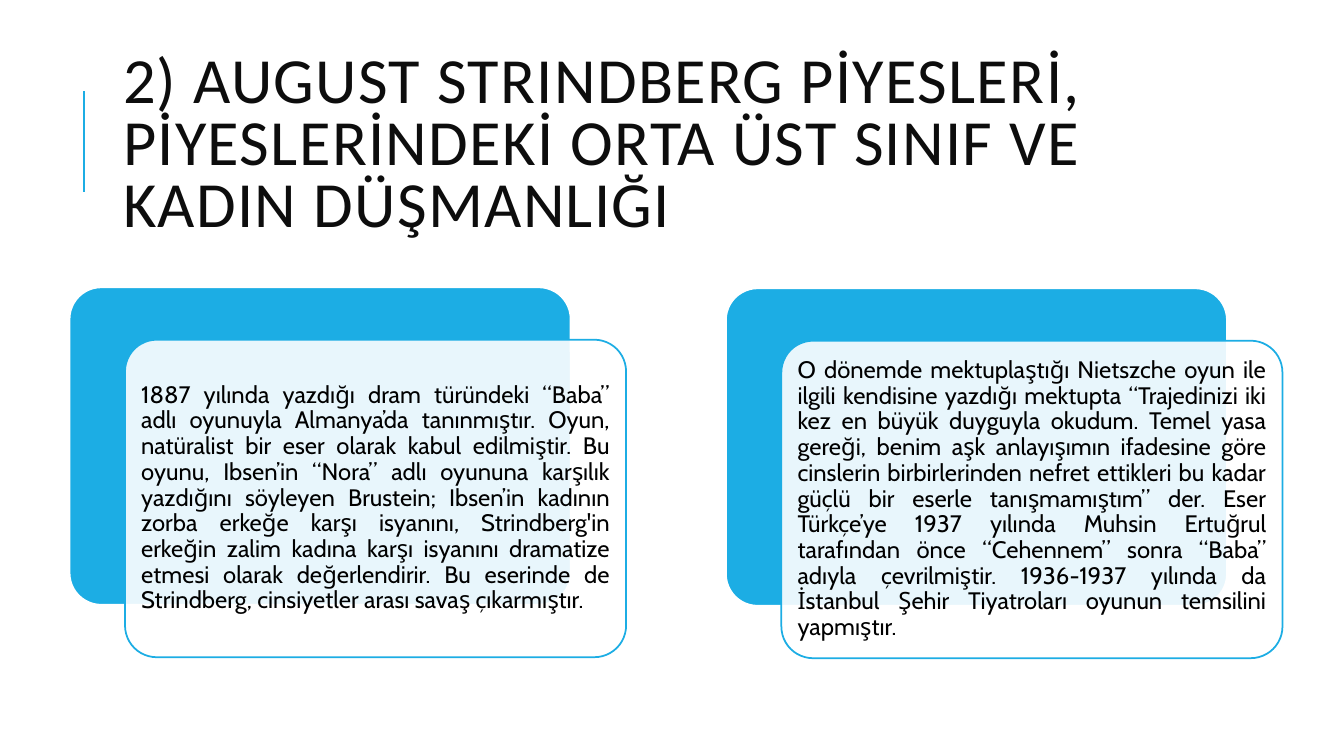
from dataclasses import dataclass

from lxml.etree import SubElement
from pptx import Presentation
from pptx.dml.color import RGBColor
from pptx.enum.shapes import MSO_CONNECTOR, MSO_SHAPE
from pptx.enum.text import MSO_ANCHOR, MSO_AUTO_SIZE, PP_ALIGN
from pptx.oxml.ns import qn
from pptx.shapes.autoshape import Shape
from pptx.slide import Slide
from pptx.text.text import TextFrame
from pptx.util import Inches, Pt

COLORS = {
    "accent": "1CADE4",
    "white": "FFFFFF",
    "title": "0D0D0D",
    "body": "000000",
}
CARD_WIDTH, CARD_HEIGHT = 4.97, 3.15
FRONT_SHIFT_X, FRONT_SHIFT_Y = 0.55, 0.52
TEXT_MARGIN = 0.09
TEXT_INSET = 0.07


@dataclass
class Card:
    left: float
    top: float
    text: str


TITLE = "2) AUGUST STRINDBERG PİYESLERİ, PİYESLERİNDEKİ ORTA ÜST SINIF VE KADIN DÜŞMANLIĞI"
CARDS = [
    Card(
        0.69,
        2.85,
        "1887 yılında yazdığı dram türündeki “Baba” adlı oyunuyla Almanya’da tanınmıştır. "
        "Oyun, natüralist bir eser olarak kabul edilmiştir. Bu oyunu, Ibsen’in “Nora” adlı "
        "oyununa karşılık yazdığını söyleyen Brustein; Ibsen’in kadının zorba erkeğe karşı "
        "isyanını, Strindberg'in erkeğin zalim kadına karşı isyanını dramatize etmesi olarak "
        "değerlendirir. Bu eserinde de Strindberg, cinsiyetler arası savaş çıkarmıştır.",
    ),
    Card(
        7.2,
        2.86,
        "O dönemde mektuplaştığı Nietszche oyun ile ilgili kendisine yazdığı mektupta "
        "“Trajedinizi iki kez en büyük duyguyla okudum. Temel yasa gereği, benim aşk "
        "anlayışımın ifadesine göre cinslerin birbirlerinden nefret ettikleri bu kadar güçlü "
        "bir eserle tanışmamıştım” der. Eser Türkçe’ye 1937 yılında Muhsin Ertuğrul "
        "tarafından önce “Cehennem” sonra “Baba” adıyla çevrilmiştir. 1936-1937 yılında da "
        "İstanbul Şehir Tiyatroları oyunun temsilini yapmıştır.",
    ),
]


def color(name: str) -> RGBColor:
    return RGBColor.from_string(COLORS[name])


def write_text(
    frame: TextFrame, text: str, font: str, size: float, ink: str,
    alignment: PP_ALIGN, line_spacing: float,
) -> None:
    frame.text = text
    frame.word_wrap = True
    frame.auto_size = MSO_AUTO_SIZE.NONE
    frame.vertical_anchor = MSO_ANCHOR.MIDDLE
    para = frame.paragraphs[0]
    para.alignment = alignment
    para.line_spacing = line_spacing
    span = para.runs[0]
    span.font.name = font
    span.font.size = Pt(size)
    span.font.color.rgb = color(ink)


def add_title(page: Slide) -> None:
    title = page.shapes.title
    title.left, title.top = Inches(1.12), Inches(0.64)
    title.width, title.height = Inches(10.63), Inches(1.64)
    write_text(title.text_frame, TITLE, "Calibri", 46, "title", PP_ALIGN.LEFT, 0.8)
    span = title.text_frame.paragraphs[0].runs[0]
    span.font._element.set("spc", "100")


def add_title_rule(page: Slide) -> None:
    rule = page.shapes.add_connector(
        MSO_CONNECTOR.STRAIGHT, Inches(0.83), Inches(1.9), Inches(0.83), Inches(0.9)
    )
    rule.line.color.rgb = color("accent")
    rule.line.width = Pt(1.5)
    SubElement(rule._element.spPr, qn("a:effectLst"))


def add_panel(page: Slide, left: float, top: float, fill: str, outline: str) -> Shape:
    panel = page.shapes.add_shape(
        MSO_SHAPE.ROUNDED_RECTANGLE,
        Inches(left), Inches(top), Inches(CARD_WIDTH), Inches(CARD_HEIGHT),
    )
    panel.adjustments[0] = 0.1
    panel.shadow.inherit = False
    panel.fill.solid()
    panel.fill.fore_color.rgb = color(fill)
    panel.line.color.rgb = color(outline)
    panel.line.width = Pt(1.25)
    return panel


def add_card(page: Slide, card: Card) -> None:
    add_panel(page, card.left, card.top, "accent", "white")
    left, top = card.left + FRONT_SHIFT_X, card.top + FRONT_SHIFT_Y
    front = add_panel(page, left, top, "white", "accent")
    fill_color = front._element.spPr.find(qn("a:solidFill")).find(qn("a:srgbClr"))
    SubElement(fill_color, qn("a:alpha"), val="90000")

    box = page.shapes.add_textbox(
        Inches(left + TEXT_MARGIN), Inches(top + TEXT_MARGIN),
        Inches(CARD_WIDTH - 2 * TEXT_MARGIN), Inches(CARD_HEIGHT - 2 * TEXT_MARGIN),
    )
    frame = box.text_frame
    frame.margin_left = frame.margin_right = Inches(TEXT_INSET)
    frame.margin_top = frame.margin_bottom = Inches(TEXT_INSET)
    write_text(frame, card.text, "Cabin", 17, "body", PP_ALIGN.JUSTIFY, 0.9)


def main() -> None:
    deck = Presentation()
    deck.slide_width, deck.slide_height = Inches(13.33), Inches(7.5)
    page = deck.slides.add_slide(deck.slide_layouts[5])
    add_title_rule(page)
    add_title(page)
    for card in CARDS:
        add_card(page, card)
    deck.save("out.pptx")


if __name__ == "__main__":
    main()
